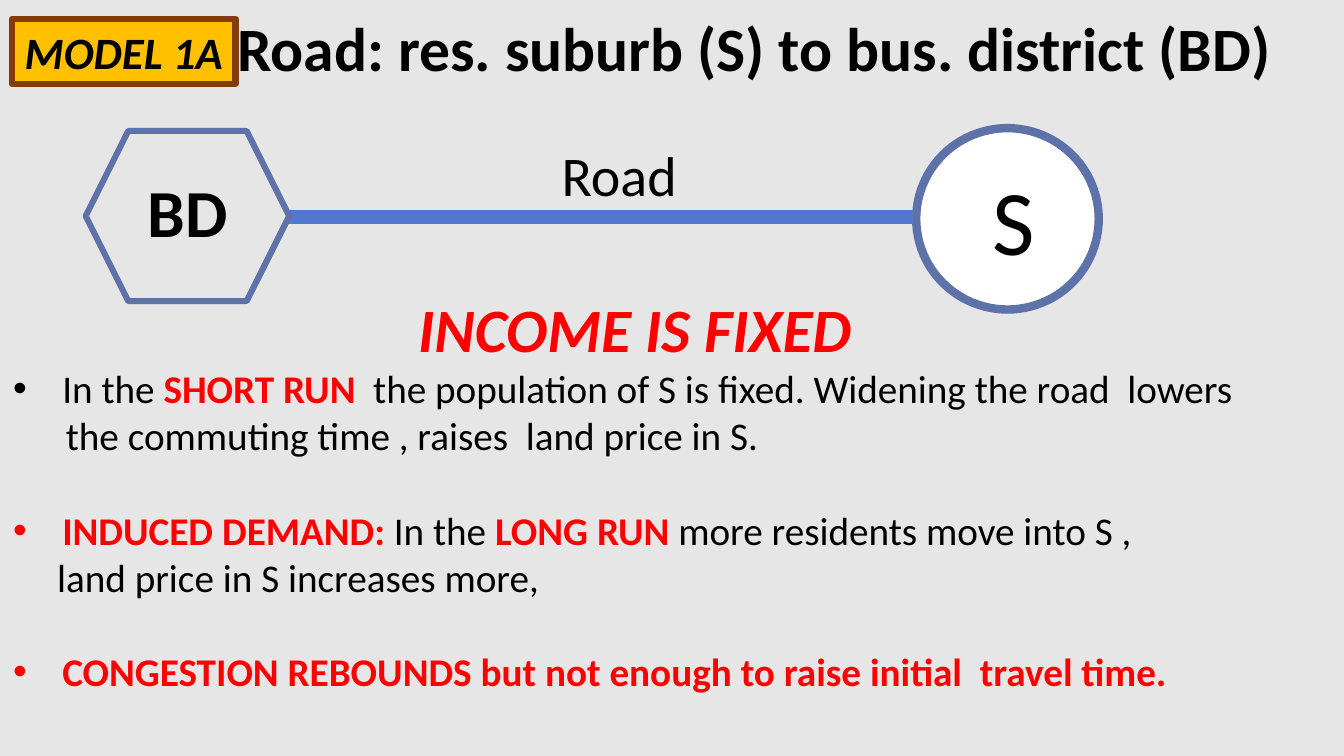
from lxml.etree import SubElement
from pptx import Presentation
from pptx.dml.color import RGBColor
from pptx.enum.shapes import MSO_CONNECTOR as Connector, MSO_SHAPE as Preset
from pptx.enum.text import MSO_ANCHOR as Anchor, PP_ALIGN as Align
from pptx.oxml.ns import qn
from pptx.util import Cm, Pt

THEME = {
    "font": "Calibri",
    "ground": "E7E6E6", "ink": "000000", "accent": "FF0000", "white": "FFFFFF",
    "outline": "5D72A9", "road": "4F78CE", "badge": "FFC000", "badge_edge": "843C0B",
    "title": 44, "suburb": 66, "district": 48, "label": 40, "badge_text": 32, "body": 28,
}

BOLD = {"bold": True}
RED = {"bold": True, "color": "accent"}
SHOUT = {"bold": True, "italic": True, "color": "accent"}

HEADING = "Road: res. suburb (S) to bus. district (BD)"
ASSUMPTION = "INCOME IS FIXED"
FINDINGS = [
    {"bullet": True, "margin": 1.24, "before": 0, "runs": [
        ("In the ", {}), ("SHORT RUN  ", RED),
        ("the population of S is fixed. Widening the road  lowers", {})]},
    {"bullet": False, "margin": 1.33, "before": 0, "runs": [
        ("the commuting time , raises  land price in S.", {})]},
    {"bullet": True, "margin": 1.24, "before": 34, "runs": [
        ("INDUCED DEMAND: ", RED), ("In the ", {}), ("LONG RUN ", RED),
        ("more residents move into S ,", {})]},
    {"bullet": False, "margin": 1.11, "before": 0, "runs": [
        ("land price in S increases more,", {})]},
    {"bullet": True, "margin": 1.24, "before": 34, "runs": [
        ("CONGESTION REBOUNDS but not enough to raise initial  travel time.", RED)]},
]

ROAD = {"start": 7.29, "end": 23.01, "y": 5.46, "width": 10}
SUBURB = {"preset": Preset.OVAL, "box": (23.09, 3.23, 4.6, 4.57), "fill": "white",
          "edge": ("outline", 6), "text": "S", "size": "suburb", "style": {},
          "frame": {"margin_left": Cm(0.33)}}
DISTRICT = {"preset": Preset.HEXAGON, "box": (2.16, 3.3, 5.13, 4.29), "fill": None,
            "edge": ("outline", 4.33), "text": "BD", "size": "district", "style": BOLD,
            "frame": {"margin_bottom": Cm(0.25)}}
BADGE = {"preset": Preset.RECTANGLE, "box": (0.3, 0.48, 5.64, 1.63), "fill": "badge",
         "edge": ("badge_edge", 4.5), "text": "MODEL 1A", "size": "badge_text",
         "style": {"bold": True, "italic": True}, "frame": {}}


def color(name):
    return RGBColor.from_string(THEME[name])


def set_all(target, values):
    for key, value in values.items():
        setattr(target, key, value)


def write(paragraph, text, size, style):
    run = paragraph.add_run()
    run.text = text
    run.font.color.rgb = color(style.get("color", "ink"))
    set_all(run.font, {"name": THEME["font"], "size": Pt(THEME[size]),
                       "bold": style.get("bold", False),
                       "italic": style.get("italic", False)})


def prepare(frame, **changes):
    set_all(frame, {"word_wrap": False, "vertical_anchor": Anchor.MIDDLE,
                    "margin_left": 0, "margin_right": 0,
                    "margin_top": 0, "margin_bottom": 0, **changes})


def add_text(slide, box, **changes):
    frame = slide.shapes.add_textbox(*map(Cm, box)).text_frame
    prepare(frame, **changes)
    frame.paragraphs[0].alignment = Align.CENTER
    return frame


def add_node(slide, node):
    shape = slide.shapes.add_shape(node["preset"], *map(Cm, node["box"]))
    shape.shadow.inherit = False
    if node["fill"]:
        shape.fill.solid()
        shape.fill.fore_color.rgb = color(node["fill"])
    else:
        shape.fill.background()
    edge, width = node["edge"]
    shape.line.color.rgb = color(edge)
    shape.line.width = Pt(width)
    prepare(shape.text_frame, **node["frame"])
    paragraph = shape.text_frame.paragraphs[0]
    paragraph.alignment = Align.CENTER
    write(paragraph, node["text"], node["size"], node["style"])


def add_road(slide):
    y = Cm(ROAD["y"])
    road = slide.shapes.add_connector(
        Connector.STRAIGHT, Cm(ROAD["start"]), y, Cm(ROAD["end"]), y)
    road.line.color.rgb = color("road")
    road.line.width = Pt(ROAD["width"])
    SubElement(road._element.spPr, qn("a:effectLst"))


def add_finding(frame, finding):
    paragraph = frame.add_paragraph()
    set_all(paragraph, {"alignment": Align.LEFT, "space_before": Pt(finding["before"])})
    properties = paragraph._p.get_or_add_pPr()
    margin = Cm(finding["margin"])
    properties.set("marL", str(margin))
    if finding["bullet"]:
        properties.set("indent", str(-margin))
        SubElement(properties, qn("a:buFont"), typeface="Arial")
        SubElement(properties, qn("a:buChar"), char="•")
    for text, style in finding["runs"]:
        write(paragraph, text, "body", style)


def main():
    deck = Presentation()
    set_all(deck, {"slide_width": Cm(33.87), "slide_height": Cm(19.05)})
    slide = deck.slides.add_slide(deck.slide_layouts[6])
    slide.background.fill.solid()
    slide.background.fill.fore_color.rgb = color("ground")

    title = add_text(slide, (5.85, 0, 26.35, 2.62)).paragraphs[0]
    title.line_spacing = 0.9
    write(title, HEADING, "title", BOLD)

    add_node(slide, SUBURB)
    add_road(slide)
    add_node(slide, DISTRICT)
    label = add_text(slide, (13.89, 3.4, 3.43, 1.96))
    write(label.paragraphs[0], "Road", "label", {})

    body = add_text(slide, (0.08, 7.19, 31.85, 10.52), word_wrap=True,
                    vertical_anchor=Anchor.TOP, margin_left=Cm(0.25),
                    margin_right=Cm(0.25), margin_top=Cm(0.13))
    write(body.paragraphs[0], ASSUMPTION, "title", SHOUT)
    for finding in FINDINGS:
        add_finding(body, finding)

    add_node(slide, BADGE)
    deck.save("out.pptx")


if __name__ == "__main__":
    main()
